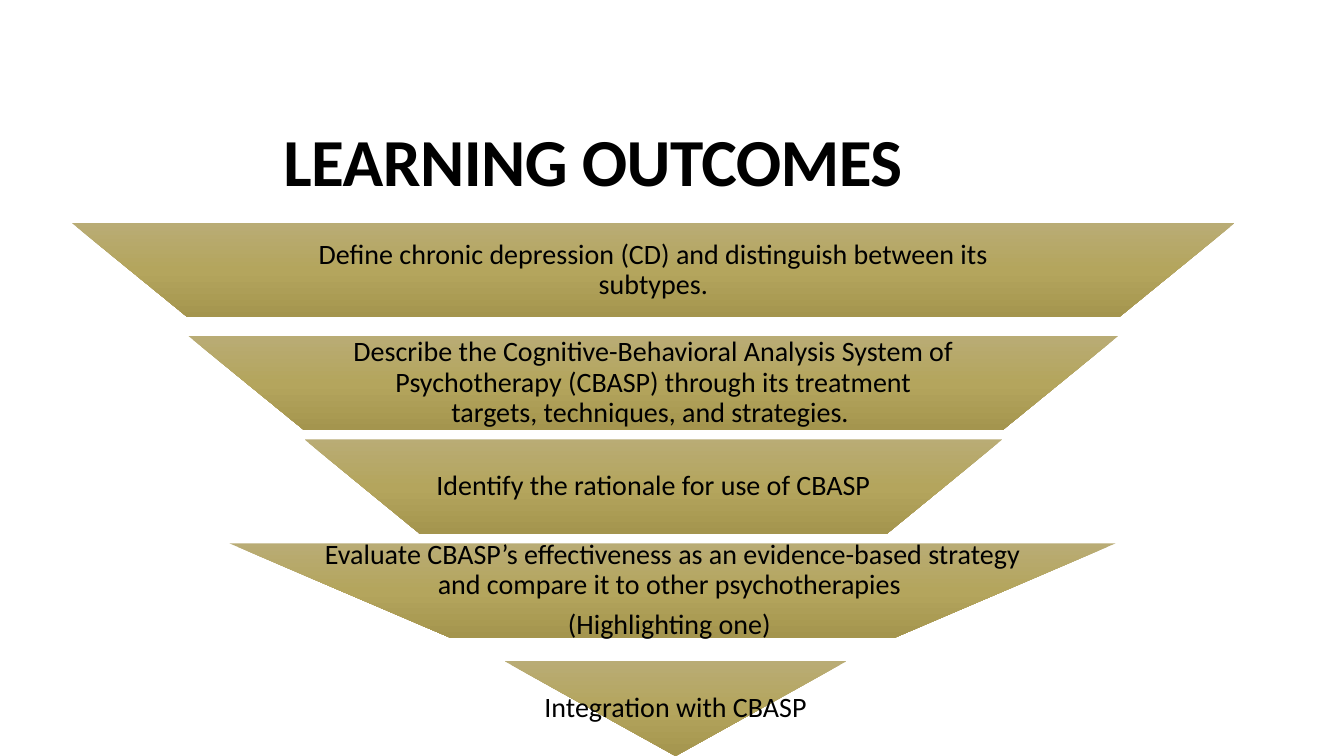
from pptx import Presentation
from pptx.util import Inches, Pt
from pptx.dml.color import RGBColor
from pptx.enum.text import MSO_ANCHOR as Anchor, MSO_AUTO_SIZE as Fit, PP_ALIGN as Align
from copy import deepcopy

HEIGHT = 0.94
SHADES = ["B9AC75", "B4A55D", "A4954E"]
# middle, top, upper width, lower width, side inset, paragraphs
BANDS = [
    (6.48, 2.21, 11.54, 9.23, 2.04,
     ["Define chronic depression (CD) and distinguish between its subtypes."]),
    (6.48, 3.33, 9.23, 6.92, 1.63,
     ["Describe the Cognitive-Behavioral Analysis System of Psychotherapy (CBASP) "
      "through its treatment targets, techniques, and strategies. "]),
    (6.48, 4.36, 6.92, 4.62, 1.23, ["Identify the rationale for use of CBASP"]),
    (6.67, 5.39, 8.79, 4.39, 0.82,
     ["Evaluate CBASP’s effectiveness as an evidence-based strategy and compare it "
      "to other psychotherapies ", "(Highlighting one) "]),
    (6.7, 6.56, 3.39, 0, 0.02, ["Integration with CBASP"]),
]


def color(code):
    return RGBColor.from_string(code)


def write(frame, lines, size, bold, frame_format, line_format):
    for name, value in frame_format.items():
        setattr(frame, name, value)
    frame.text = "\n".join(lines)
    for line in frame.paragraphs:
        for name, value in line_format.items():
            setattr(line, name, value)
        font = line.runs[0].font
        for name, value in {"name": "Calibri", "size": Pt(size), "bold": bold}.items():
            setattr(font, name, value)
        font.color.rgb = color("000000")


deck = Presentation()
deck.slide_width, deck.slide_height = Inches(13.33), Inches(7.5)
slide = deck.slides.add_slide(deck.slide_layouts[5])

title = slide.shapes.title
title.left, title.top = Inches(0.71), Inches(0.4)
title.width, title.height = Inches(11.54), Inches(1.64)
write(title.text_frame, ["LEARNING OUTCOMES"], 48, True,
      {"vertical_anchor": Anchor.BOTTOM, "auto_size": Fit.NONE,
       "word_wrap": True, "margin_left": Inches(2.1)},
      {"alignment": Align.LEFT, "line_spacing": 0.9})
run = title.text_frame.paragraphs[0].runs[0]
run.font._element.set("spc", "-40")

for middle, top, upper, lower, inset, lines in BANDS:
    low = top + HEIGHT
    points = [(middle + upper / 2, top), (middle + lower / 2, low),
              (middle - lower / 2, low), (middle - upper / 2, top)]
    corners = [(Inches(x), Inches(y)) for x, y in points]
    path = slide.shapes.build_freeform(*corners[0])
    path.add_line_segments(corners[1:], close=True)
    band = path.convert_to_shape()
    band.shadow.inherit = False
    band.line.fill.background()

    band.fill.gradient()
    band.fill.gradient_angle = 270
    stops = band.fill._xPr.gradFill.gsLst
    stops.insert(1, deepcopy(stops[0]))
    for i, stop in enumerate(band.fill.gradient_stops):
        stop.position = i / 2
        stop.color.rgb = color(SHADES[i])

    write(band.text_frame, lines, 20, False,
          {"vertical_anchor": Anchor.MIDDLE, "word_wrap": True,
           "margin_left": Inches(inset), "margin_right": Inches(inset),
           "margin_top": Inches(0.02), "margin_bottom": Inches(0.02)},
          {"alignment": Align.CENTER, "line_spacing": 0.9, "space_after": Pt(7)})

deck.save("out.pptx")
